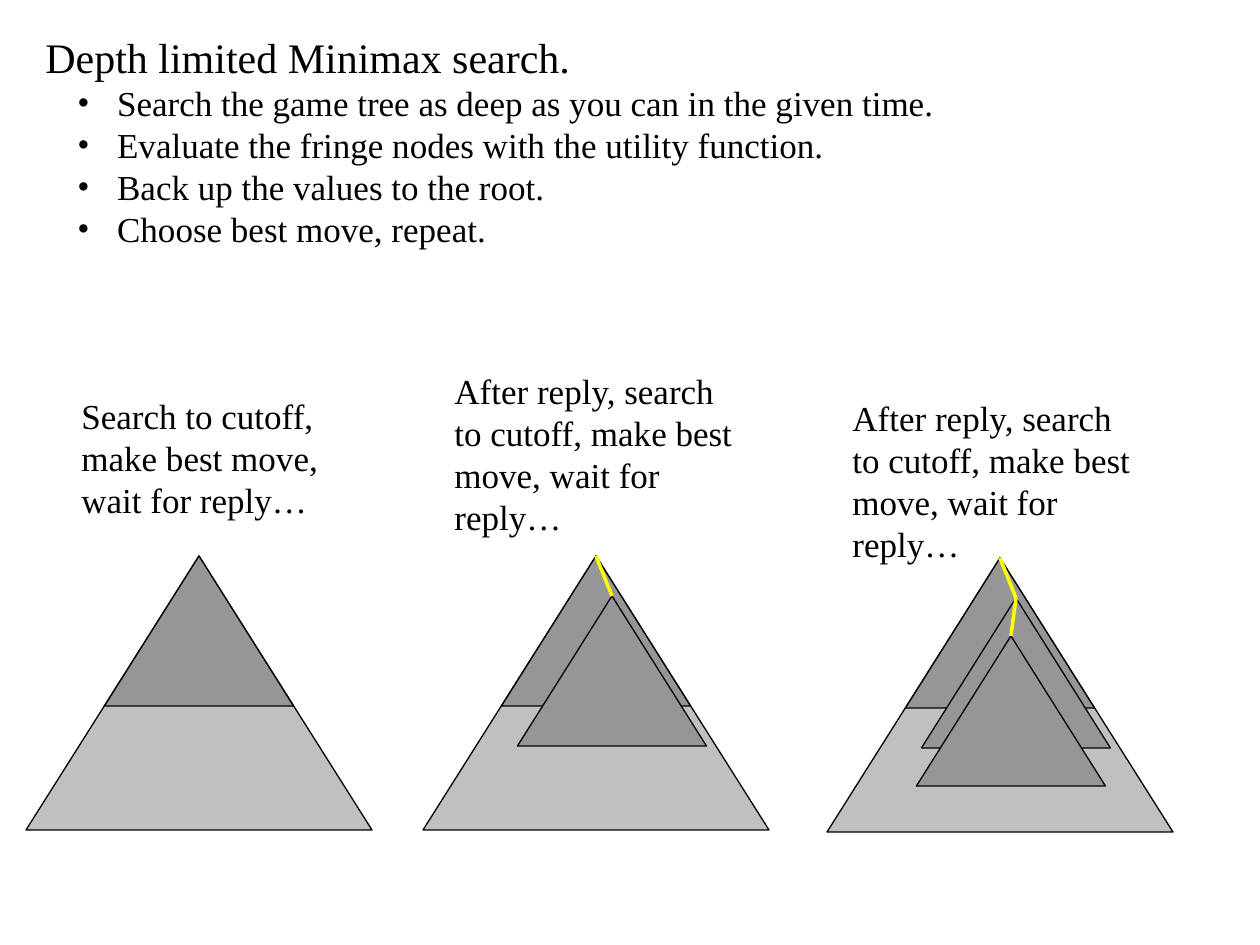
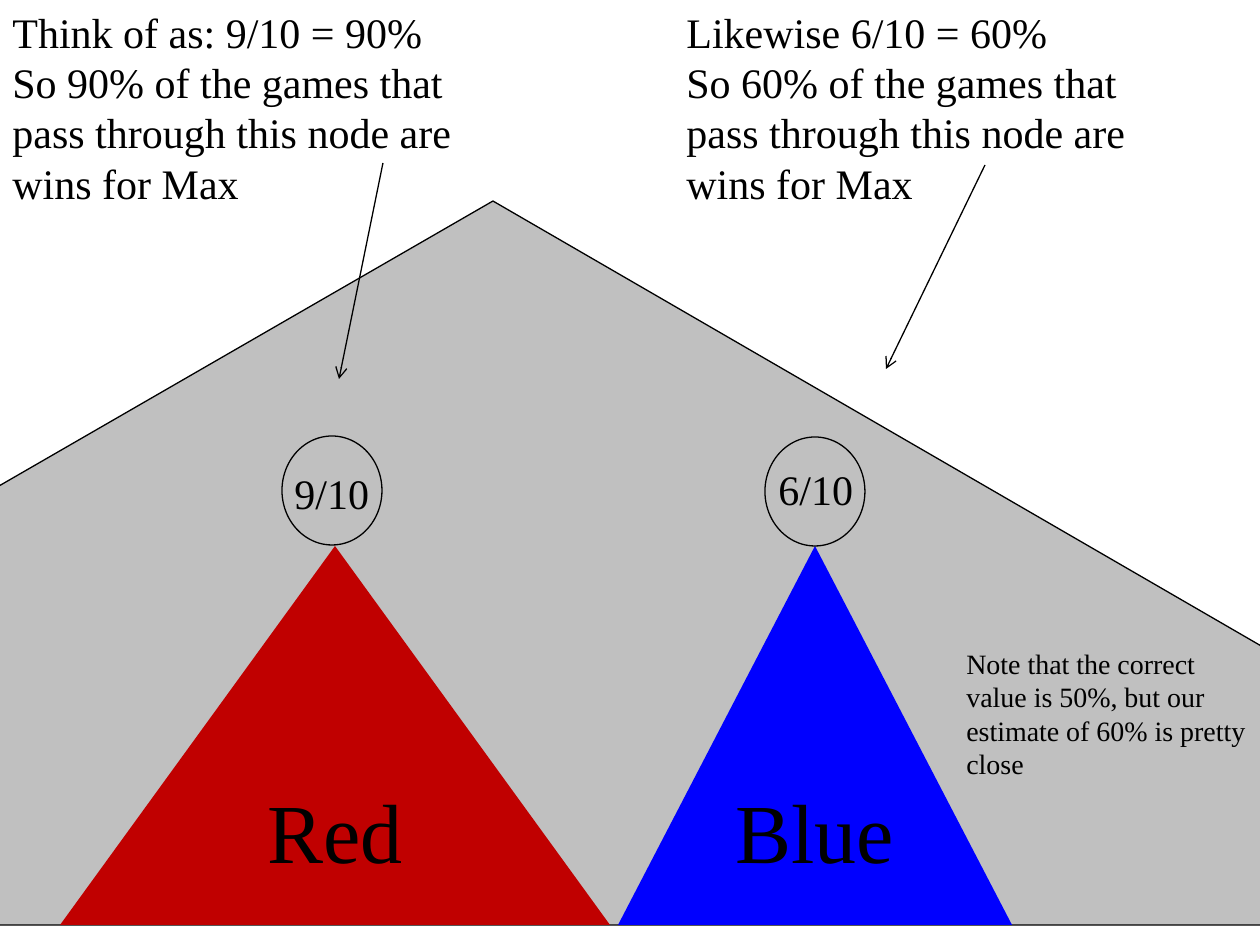
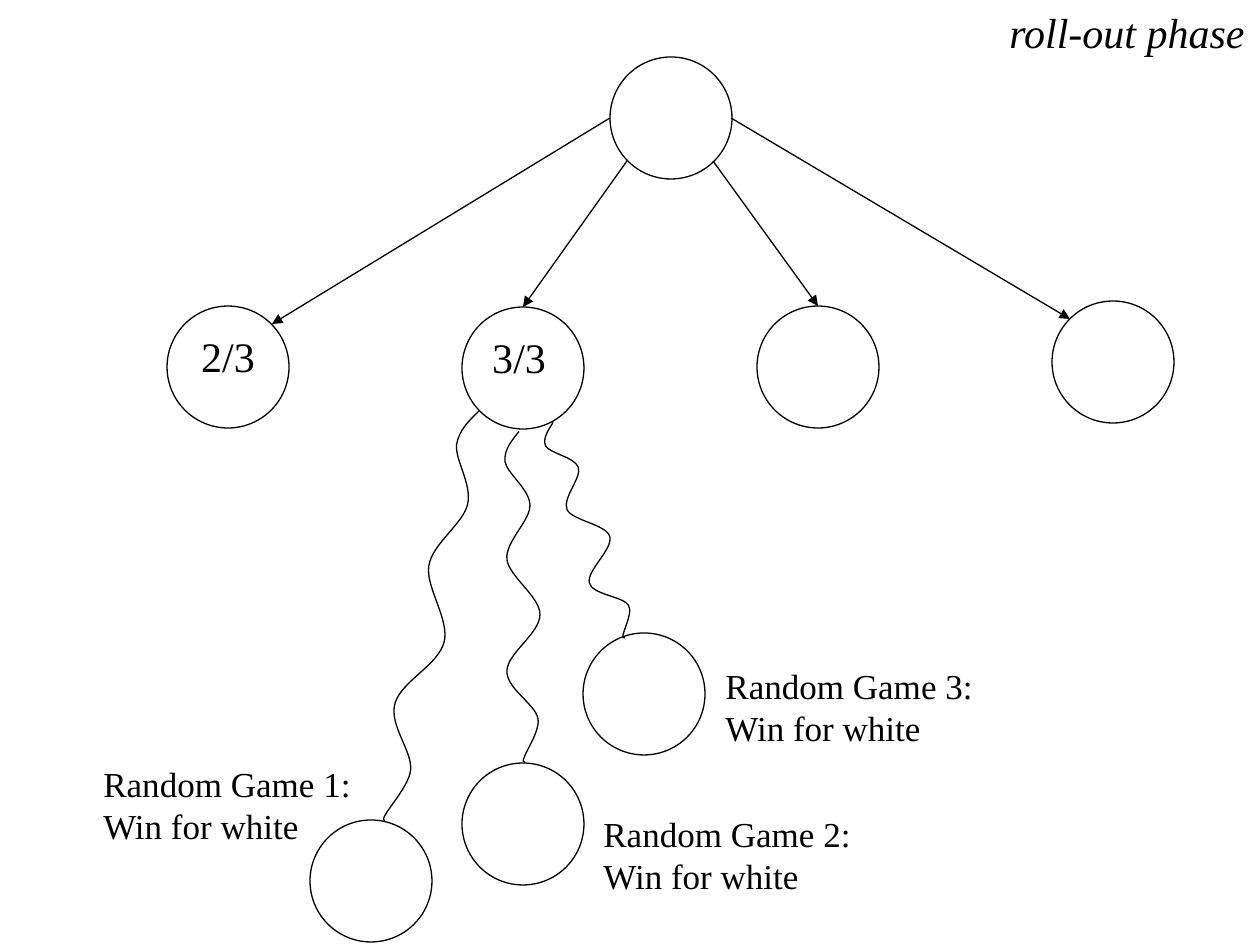
from dataclasses import dataclass
from pptx import Presentation
from pptx.dml.color import RGBColor
from pptx.enum import shapes, text
from pptx.oxml.ns import qn
from pptx.util import Emu, Pt
from lxml import etree


@dataclass(frozen=True)
class Theme:
    font: str = "Times New Roman"
    ink: str = "000000"
    tree: str = "C0C0C0"
    searched: str = "969696"
    move: str = "FFFF00"
    red: str = "C00000"
    blue: str = "0000FF"
    label: int = 48
    heading: int = 24
    body: int = 20
    note: int = 16
    outline: float = 0.75
    move_line: float = 2


THEME = Theme()
PX = 914400 / 126
SLIDE_SIZE = (1260, 945)
TRIANGLE = shapes.MSO_SHAPE.ISOSCELES_TRIANGLE
ELLIPSE = shapes.MSO_SHAPE.OVAL
CENTER = text.PP_ALIGN.CENTER
LEFT = text.PP_ALIGN.LEFT

HEADING = "Depth limited Minimax search."
STEPS = [
    " Search the game tree as deep as you can in the given time.",
    " Evaluate the fringe nodes with the utility function.",
    " Back up the values to the root.",
    " Choose best move, repeat.",
]
BULLET_MARGIN, BULLET_HANG = 63, 31
AFTER_REPLY = "After reply, search to cutoff, make best move, wait for reply…"
STAGES = [
    ((199, 556), (69, 388, 307, 140),
     "Search to cutoff, make best move, wait for reply…"),
    ((596, 556), (442, 363, 307, 183), AFTER_REPLY),
    ((1000, 558), (840, 390, 307, 183), AFTER_REPLY),
]
MOVE_OFFSETS = [(0, 0), (16, 40), (11, 78)]
TREE_SIZE = (346, 274)
SEARCH_SIZE = (189, 150)

WHOLE_TREE = (-762, 201, 2505, 724)
WHOLE_TREE_APEX = 0.501
SUBTREES = [
    ("Red", THEME.red, (60, 546, 550, 379)),
    ("Blue", THEME.blue, (618, 546, 394, 379)),
]
ESTIMATES = [
    ("9/10", (282, 436), (282, 461, 107, 63)),
    ("6/10", (765, 437), (766, 457, 115, 63)),
]
ESTIMATE_SIZE = (100, 109)
EXPLANATIONS = [
    (0, ["Think of as: 9/10 = 90%",
         "So 90% of the games that pass through this node are wins for Max"],
     (383, 163), (339, 379)),
    (674, ["Likewise 6/10 = 60%",
           "So 60% of the games that pass through this node are wins for Max"],
     (985, 165), (886, 369)),
]
NOTE = "Note that the correct value is 50%, but our estimate of 60% is pretty close"
NOTE_BOX = (954, 640, 306, 149)

PHASE = "roll-out phase"
PHASE_BOX = (997, 0, 263, 63)
NODE_SIZE = (122, 122)
ROOT = (610, 57)
CHILD_LEFT, CHILD_STEP = 167, 295
CHILDREN = [
    (306, "2/3", CENTER, (610, 118), (272, 324)),
    (307, "3/3", LEFT, (627, 161), (523, 307)),
    (306, "", LEFT, (713, 161), (818, 306)),
    (301, "", LEFT, (731, 118), (1070, 319)),
]
GAMES = [
    ("Random Game 1: Win for white",
     (310, 820), (91, 756, 280, 97), (432, 616), 421, 13.8),
    ("Random Game 2: Win for white",
     (462, 763), (591, 806, 287, 97), (522, 597), 331, 0),
    ("Random Game 3: Win for white",
     (583, 633), (713, 658, 286, 97), (589, 530), 227, 343.1),
]
WAVE_SIZE = (36, 331)
WAVE_START = (15, 0)
WAVE = [
    ((8, 9), (0, 18), (1, 30)),
    ((3, 42), (25, 57), (26, 73)),
    ((27, 89), (1, 110), (3, 128)),
    ((5, 145), (36, 165), (36, 183)),
    ((36, 202), (4, 221), (3, 239)),
    ((2, 257), (31, 272), (34, 287)),
    ((37, 302), (13, 331), (21, 331)),
]


def emu(*lengths):
    return [Emu(round(length * PX)) for length in lengths]


def color(value):
    return RGBColor.from_string(value)


def set_line(line, value=THEME.ink, width=THEME.outline):
    line.color.rgb = color(value)
    line.width = Pt(width)


def write(paragraph, words, size, align=LEFT, italic=False):
    paragraph.alignment = align
    run = paragraph.add_run()
    run.text = words
    run.font.name = THEME.font
    run.font.size = Pt(size)
    run.font.italic = italic
    run.font.color.rgb = color(THEME.ink)


def add_bullet(paragraph):
    margin, indent = emu(BULLET_MARGIN, -BULLET_HANG)
    properties = paragraph._p.get_or_add_pPr()
    properties.set("marL", str(margin))
    properties.set("indent", str(indent))
    etree.SubElement(properties, qn("a:buFont")).set("typeface", THEME.font)
    etree.SubElement(properties, qn("a:buChar")).set("char", "•")


def add_text(slide, box, lines, size, wrap=True, italic=False):
    frame = slide.shapes.add_textbox(*emu(*box)).text_frame
    frame.word_wrap = wrap
    frame.auto_size = text.MSO_AUTO_SIZE.SHAPE_TO_FIT_TEXT
    for index, words in enumerate(lines):
        paragraph = frame.add_paragraph() if index else frame.paragraphs[0]
        write(paragraph, words, size, italic=italic)
    return frame


def add_figure(slide, kind, box, fill=None, outlined=True):
    shape = slide.shapes.add_shape(kind, *emu(*box))
    shape.shadow.inherit = False
    if fill:
        shape.fill.solid()
        shape.fill.fore_color.rgb = color(fill)
    else:
        shape.fill.background()
    if outlined:
        set_line(shape.line)
    else:
        shape.line.fill.background()
    return shape


def add_line(slide, start, end, value=THEME.ink, width=THEME.outline, arrow=None):
    connector = slide.shapes.add_connector(
        shapes.MSO_CONNECTOR.STRAIGHT, *emu(*start, *end))
    set_line(connector.line, value, width)
    if arrow:
        line = connector.line._get_or_add_ln()
        etree.SubElement(line, qn("a:tailEnd")).set("type", arrow)
    etree.SubElement(connector._element.spPr, qn("a:effectLst"))


def add_triangle_at(slide, apex, size, fill):
    add_figure(slide, TRIANGLE, (apex[0] - size[0] / 2, apex[1], *size), fill)


def bend(shape, curves):
    segments = list(shape._element.iter(qn("a:lnTo")))
    for segment, points in zip(segments, curves):
        curve = etree.Element(qn("a:cubicBezTo"))
        for x, y in points:
            point = etree.SubElement(curve, qn("a:pt"))
            point.set("x", str(x - shape.left))
            point.set("y", str(y - shape.top))
        segment.getparent().replace(segment, curve)


def add_wave(slide, center, height, rotation):
    width, full_height = WAVE_SIZE

    def place(point):
        return emu(center[0] - width / 2 + point[0],
                   center[1] - height / 2 + point[1] * height / full_height)

    curves = [[place(point) for point in curve] for curve in WAVE]
    builder = slide.shapes.build_freeform(*place(WAVE_START))
    builder.add_line_segments([curve[-1] for curve in curves], close=False)
    shape = builder.convert_to_shape()
    bend(shape, curves)
    shape.shadow.inherit = False
    shape.fill.background()
    set_line(shape.line)
    shape.rotation = rotation


def build_minimax(slide):
    frame = add_text(slide, (33, 25, 1144, 233), [HEADING], THEME.heading)
    for step in STEPS:
        paragraph = frame.add_paragraph()
        paragraph.level = 1
        write(paragraph, step, THEME.body)
        add_bullet(paragraph)
    for count, (root, caption_box, caption) in enumerate(STAGES, 1):
        apexes = [(root[0] + x, root[1] + y) for x, y in MOVE_OFFSETS[:count]]
        add_triangle_at(slide, root, TREE_SIZE, THEME.tree)
        for apex in apexes:
            add_triangle_at(slide, apex, SEARCH_SIZE, THEME.searched)
        add_text(slide, caption_box, [caption], THEME.body)
        for start, end in zip(apexes, apexes[1:]):
            add_line(slide, start, end, THEME.move, THEME.move_line)


def build_estimates(slide):
    tree = add_figure(slide, TRIANGLE, WHOLE_TREE, THEME.tree)
    tree.adjustments[0] = WHOLE_TREE_APEX
    for name, fill, box in SUBTREES:
        frame = add_figure(slide, TRIANGLE, box, fill, outlined=False).text_frame
        frame.word_wrap = False
        frame.vertical_anchor = text.MSO_ANCHOR.MIDDLE
        write(frame.paragraphs[0], name, THEME.label, CENTER)
    for value, corner, box in ESTIMATES:
        add_figure(slide, ELLIPSE, (*corner, *ESTIMATE_SIZE))
        add_text(slide, box, [value], THEME.heading)
    for left, lines, start, end in EXPLANATIONS:
        add_text(slide, (left, 0, 474, 217), lines, THEME.heading)
        add_line(slide, start, end, arrow="arrow")
    add_text(slide, NOTE_BOX, [NOTE], THEME.note)


def build_rollout(slide):
    add_figure(slide, ELLIPSE, (*ROOT, *NODE_SIZE))
    for index, (top, value, align, start, end) in enumerate(CHILDREN):
        left = CHILD_LEFT + index * CHILD_STEP
        frame = add_figure(slide, ELLIPSE, (left, top, *NODE_SIZE)).text_frame
        if value:
            frame.vertical_anchor = text.MSO_ANCHOR.TOP
            write(frame.paragraphs[0], value, THEME.heading, align)
        add_line(slide, start, end, arrow="triangle")
    for caption, corner, box, center, height, rotation in GAMES:
        add_wave(slide, center, height, rotation)
        add_figure(slide, ELLIPSE, (*corner, *NODE_SIZE))
        add_text(slide, box, [caption], THEME.body)
    add_text(slide, PHASE_BOX, [PHASE], THEME.heading, wrap=False, italic=True)


def main():
    presentation = Presentation()
    presentation.slide_width, presentation.slide_height = emu(*SLIDE_SIZE)
    for build in (build_minimax, build_estimates, build_rollout):
        build(presentation.slides.add_slide(presentation.slide_layouts[6]))
    presentation.save("out.pptx")


if __name__ == "__main__":
    main()
